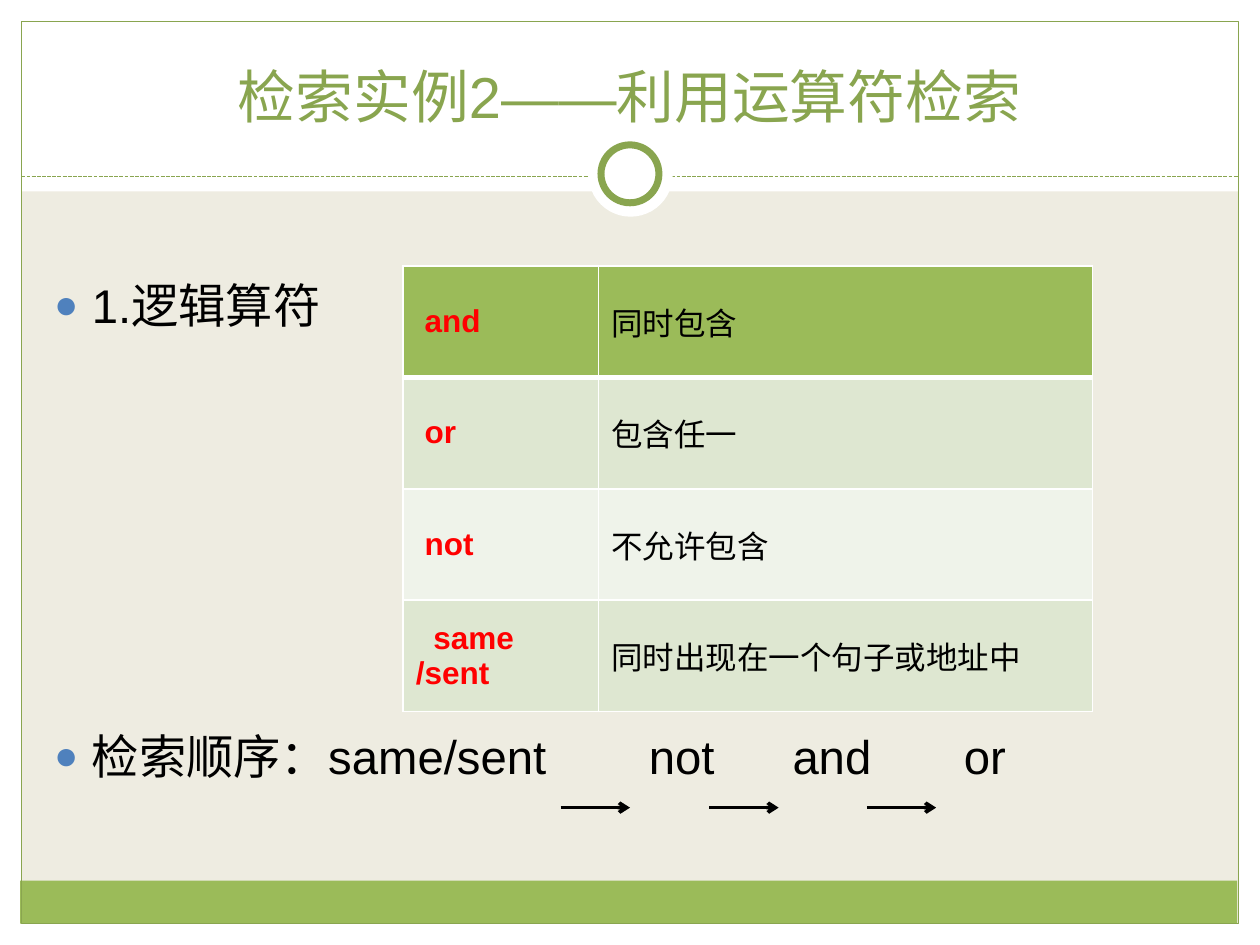
from dataclasses import dataclass

from lxml.etree import SubElement
from pptx import Presentation
from pptx.dml.color import RGBColor
from pptx.enum.dml import MSO_LINE_DASH_STYLE as Dash
from pptx.enum.shapes import MSO_CONNECTOR as Connector, MSO_SHAPE as Shape
from pptx.enum.text import MSO_ANCHOR as Anchor, MSO_AUTO_SIZE as AutoSize, PP_ALIGN as Align
from pptx.oxml.ns import qn
from pptx.util import Inches, Pt

GREEN, DARK_GREEN, WHITE, BLACK, RED = "9BBB59", "89A54F", "FFFFFF", "000000", "FF0000"
LATIN, CHINESE = "Arial", "Noto Sans CJK SC"


@dataclass
class Panel:
    left: float
    top: float
    width: float
    height: float
    fill: str | None = WHITE
    line: str | None = None
    weight: float = 0.75
    preset: Shape = Shape.RECTANGLE


@dataclass
class Operator:
    word: str
    meaning: str
    fill: str
    indent: float = 0.07


FRAME = [
    Panel(0, 7.33, 10, 0.17),
    Panel(0, 0, 10, 1.52),
    Panel(0, 0, 0.17, 7.5),
    Panel(9.83, 0, 0.17, 7.5),
    Panel(0.16, 6.99, 9.66, 0.34, GREEN),
    Panel(0.17, 0.17, 9.66, 7.16, None, DARK_GREEN),
]
RING = [
    Panel(4.67, 1.05, 0.67, 0.67, preset=Shape.OVAL),
    Panel(4.77, 1.15, 0.46, 0.46, WHITE, DARK_GREEN, 4, Shape.OVAL),
]
OPERATORS = [
    Operator("and", "同时包含", GREEN),
    Operator("or", "包含任一", "DEE7D1"),
    Operator("not", "不允许包含", "EFF3EA"),
    Operator("same\v/sent", "同时出现在一个句子或地址中", "DEE7D1", 0.14),
]
ARROW_STARTS = [4.45, 5.63, 6.88]
SEQUENCE_TABS = [4.72, 5.86, 7.22]


def rgb(value: str) -> RGBColor:
    """Turn a hex string into a colour."""
    return RGBColor.from_string(value)


def add(parent, tag: str, **attributes):
    """Append a DrawingML child element."""
    return SubElement(parent, qn(f"a:{tag}"), {key: str(value) for key, value in attributes.items()})


def place(item, left: float, top: float, width: float, height: float) -> None:
    """Move and size a placeholder, bringing it to the front."""
    item.left, item.top, item.width, item.height = map(Inches, (left, top, width, height))
    item.element.getparent().append(item.element)


def style(paragraph, size: float, color: str, bold: bool = False, latin: str = LATIN) -> None:
    """Format every run of a paragraph."""
    for run in paragraph.runs:
        run.font.size, run.font.bold = Pt(size), bold
        run.font.color.rgb = rgb(color)
        run.font.name = latin
        add(run.font._element, "ea", typeface=CHINESE)


def draw_panel(slide, panel: Panel) -> None:
    """Draw one decorative shape."""
    shape = slide.shapes.add_shape(
        panel.preset, *map(Inches, (panel.left, panel.top, panel.width, panel.height)))
    shape.shadow.inherit = False
    if panel.fill:
        shape.fill.solid()
        shape.fill.fore_color.rgb = rgb(panel.fill)
    else:
        shape.fill.background()
    if panel.line:
        shape.line.color.rgb = rgb(panel.line)
        shape.line.width = Pt(panel.weight)
    else:
        shape.line.fill.background()


def draw_line(slide, start: float, end: float, y: float, color: str, weight: float):
    """Draw a horizontal line without a shadow."""
    connector = slide.shapes.add_connector(
        Connector.STRAIGHT, Inches(start), Inches(y), Inches(end), Inches(y))
    connector.line.color.rgb = rgb(color)
    connector.line.width = Pt(weight)
    add(connector._element.spPr, "effectLst")
    return connector


def draw_arrow(slide, start: float) -> None:
    """Draw one step arrow of the search order."""
    arrow = draw_line(slide, start, start + 0.55, 6.41, BLACK, 2)
    add(arrow.line._get_or_add_ln(), "tailEnd", type="arrow")


def fill_title(title) -> None:
    """Write the slide title."""
    place(title, 0.33, 0.25, 9.33, 0.83)
    frame = title.text_frame
    frame.text = "检索实例2——利用运算符检索"
    frame.auto_size, frame.vertical_anchor = AutoSize.NONE, Anchor.BOTTOM
    frame.paragraphs[0].alignment = Align.CENTER
    style(frame.paragraphs[0], 33, DARK_GREEN)


def fill_body(body) -> None:
    """Write the two bullets around the table."""
    place(body, 0.33, 1.67, 9.3, 5)
    frame = body.text_frame
    frame.text = "1.逻辑算符\n检索顺序：same/sent\tnot\tand\tor"
    frame.auto_size, frame.margin_top = AutoSize.NONE, Inches(0.52)
    for bullet, gap in zip(frame.paragraphs, (0, 225.5)):
        bullet.space_before = Pt(gap)
        style(bullet, 27, BLACK)
        properties = bullet._p.get_or_add_pPr()
        properties.set("marL", str(Inches(0.3)))
        properties.set("indent", str(Inches(-0.3)))
        add(add(properties, "buClr"), "srgbClr", val="4F81BD")
        add(properties, "buSzPct", val=85000)
        add(properties, "buFont", typeface=LATIN)
        add(properties, "buChar", char="●")
    stops = add(properties, "tabLst")
    for position in SEQUENCE_TABS:
        add(stops, "tab", pos=Inches(position), algn="l")


def fill_cell(cell, text: str, fill: str, top: float, bottom: float):
    """Fill a table cell, draw its borders and return its paragraph."""
    cell.text_frame.text = text
    cell.vertical_anchor = Anchor.MIDDLE
    properties = cell._tc.get_or_add_tcPr()
    for side, weight in {"lnL": 1, "lnR": 1, "lnT": top, "lnB": bottom}.items():
        border = add(properties, side, w=Pt(weight))
        add(add(border, "solidFill"), "srgbClr", val=WHITE)
    cell.fill.solid()
    cell.fill.fore_color.rgb = rgb(fill)
    return cell.text_frame.paragraphs[0]


def draw_operators(slide) -> None:
    """Draw the table of search operators."""
    table = slide.shapes.add_table(
        len(OPERATORS), 2, *map(Inches, (3.2, 2.11, 5.47, 3.54))).table
    for column, width in zip(table.columns, (1.55, 3.92)):
        column.width = Inches(width)
    for index, operator in enumerate(OPERATORS):
        borders = (3 if index == 1 else 1, 3 if index == 0 else 1)
        word = fill_cell(table.cell(index, 0), operator.word, operator.fill, *borders)
        word._p.get_or_add_pPr().set("indent", str(Inches(operator.indent)))
        style(word, 18, RED, True)
        meaning = fill_cell(table.cell(index, 1), operator.meaning, operator.fill, *borders)
        style(meaning, 18, BLACK, latin=CHINESE)


def main() -> None:
    """Build and save the slide."""
    deck = Presentation()
    deck.slide_width, deck.slide_height = Inches(10), Inches(7.5)
    slide = deck.slides.add_slide(deck.slide_layouts[1])
    slide.background.fill.solid()
    slide.background.fill.fore_color.rgb = rgb("EEECE1")
    for panel in FRAME:
        draw_panel(slide, panel)
    divider = draw_line(slide, 0.17, 9.83, 1.4, DARK_GREEN, 0.75)
    divider.line.dash_style = Dash.SQUARE_DOT
    for panel in RING:
        draw_panel(slide, panel)
    fill_title(slide.shapes.title)
    fill_body(slide.placeholders[1])
    for start in ARROW_STARTS:
        draw_arrow(slide, start)
    draw_operators(slide)
    deck.save("out.pptx")


if __name__ == "__main__":
    main()
